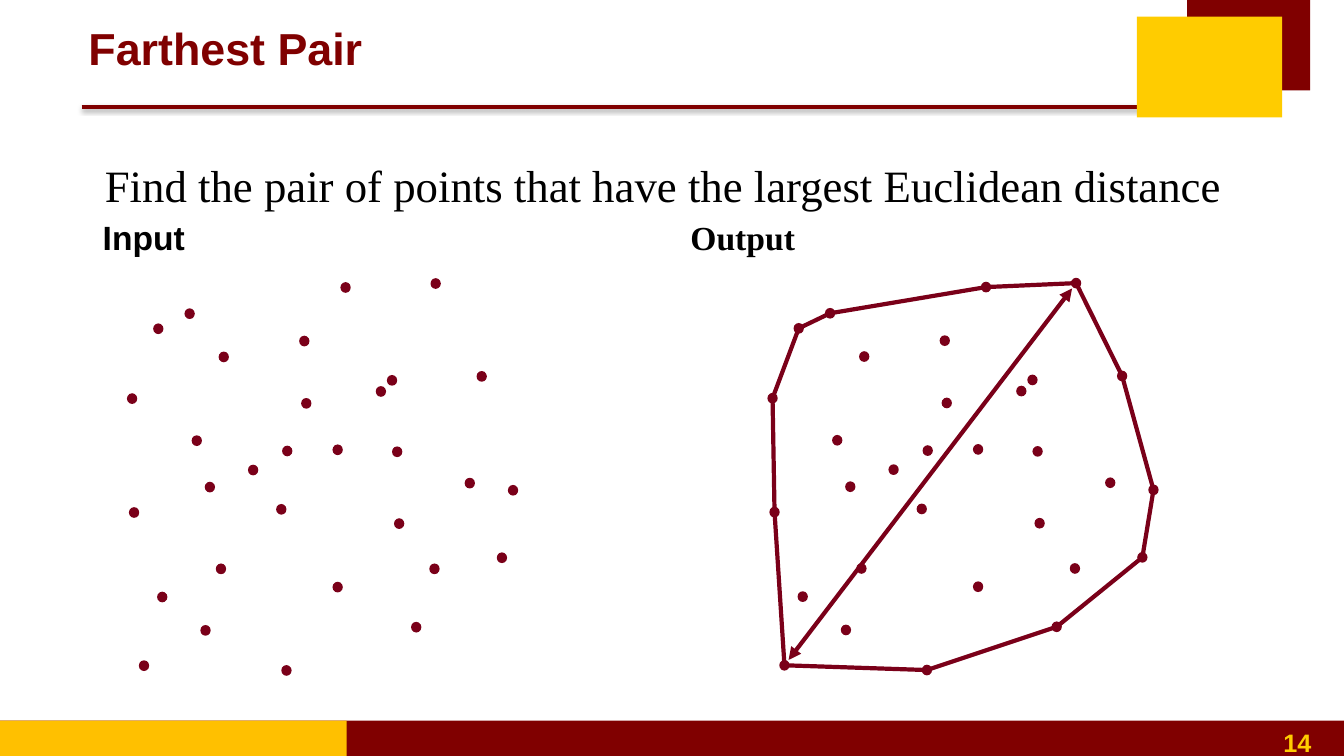
from lxml.etree import SubElement
from pptx import Presentation
from pptx.dml.color import RGBColor
from pptx.enum.shapes import MSO_CONNECTOR as Connector, MSO_SHAPE as Shape
from pptx.enum.text import MSO_ANCHOR as Anchor, PP_ALIGN as Align
from pptx.oxml.ns import qn
from pptx.util import Cm, Pt

MAROON, GOLD, AMBER, BLACK, POINT = "800000", "FFCC00", "FFC000", "000000", "7A0019"
SANS, SERIF = "Arial", "Times New Roman"
PAGE_WIDTH, PAGE_HEIGHT = 33.87, 19.05
DOT_WIDTH, DOT_HEIGHT = 0.26, 0.27

# Dot corners in cm from the cloud's top left; the hull runs counterclockwise
HULL = [(7.65, 0), (5.38, 0.1), (1.45, 0.76), (0.66, 1.14), (0, 2.9), (0.05, 5.77),
        (0.3, 9.63), (3.89, 9.75), (7.16, 8.66), (9.32, 6.91), (9.6, 5.21), (8.81, 2.34)]
INNER = [(2.31, 1.85), (4.34, 1.45), (6.55, 2.44), (6.27, 2.72), (4.39, 3.02),
         (5.18, 4.19), (6.68, 4.24), (8.51, 5.03), (6.73, 6.05), (3.76, 5.69),
         (3.05, 4.7), (3.91, 4.22), (1.63, 3.96), (1.96, 5.13), (0.76, 7.9),
         (1.85, 8.74), (2.24, 7.19), (5.18, 7.65), (7.62, 7.19)]
FARTHEST = HULL[6], HULL[0]


def color(value):
    return RGBColor.from_string(value)


def add_filled(shapes, kind, left, top, width, height, fill):
    shape = shapes.add_shape(kind, Cm(left), Cm(top), Cm(width), Cm(height))
    shape.shadow.inherit = False
    shape.fill.solid()
    shape.fill.fore_color.rgb = color(fill)
    shape.line.fill.background()


def add_text(page, text, left, top, width, height, size, font, fill,
             bold=True, align=Align.LEFT, anchor=Anchor.TOP):
    box = page.shapes.add_textbox(Cm(left), Cm(top), Cm(width), Cm(height))
    box.text_frame.word_wrap = True
    box.text_frame.vertical_anchor = anchor
    para = box.text_frame.paragraphs[0]
    para.alignment = align
    span = para.add_run()
    span.text = text
    span.font.size = Pt(size)
    span.font.name = font
    span.font.bold = bold
    span.font.color.rgb = color(fill)


def add_line(page, start, end, fill):
    """Draw a straight line and return it with its empty effect list."""
    line = page.shapes.add_connector(Connector.STRAIGHT, *map(Cm, start + end))
    line.line.color.rgb = color(fill)
    line.line.width = Pt(3)
    effects = SubElement(line._element.spPr, qn("a:effectLst"))
    return line, effects


def add_header(page, left, top, width):
    # Rule with a soft shadow
    rule, effects = add_line(page, (left, top + 2.69), (left + width, top + 2.69), MAROON)
    shadow = SubElement(effects, qn("a:outerShdw"), blurRad=str(Pt(3.1)),
                        dist=str(Pt(1.8)), dir="5400000", rotWithShape="0")
    tint = SubElement(shadow, qn("a:srgbClr"), val=BLACK)
    SubElement(tint, qn("a:alpha"), val="35000")
    # Corner blocks
    add_filled(page.shapes, Shape.RECTANGLE, left + 27.86, top, 3.1, 2.28, MAROON)
    add_filled(page.shapes, Shape.RECTANGLE, left + 26.59, top + 0.42, 3.66, 2.54, GOLD)
    # Title
    add_text(page, "Farthest Pair", left - 0.08, top + 0.15, 25.96, 2.11,
             32, SANS, MAROON, anchor=Anchor.MIDDLE)


def add_footer(page, left, top, width, height):
    add_filled(page.shapes, Shape.RECTANGLE, left, top, width, height, MAROON)
    add_filled(page.shapes, Shape.RECTANGLE, left, top, 8.74, height, AMBER)
    add_text(page, "14", left + width - 7.63, top + 0.05, 7.06, 0.84,
             18, SANS, GOLD, align=Align.RIGHT)


def add_cloud(page, left, top):
    group = page.shapes.add_group_shape()
    for x, y in HULL + INNER:
        add_filled(group.shapes, Shape.OVAL, left + x, top + y, DOT_WIDTH, DOT_HEIGHT, POINT)


def add_solution(page, left, top):
    def center(point):
        return left + point[0] + DOT_WIDTH / 2, top + point[1] + DOT_HEIGHT / 2

    # Arrow between the farthest points, trimmed a little at both ends
    start, end = map(center, FARTHEST)
    trim = [0.014 * (b - a) for a, b in zip(start, end)]
    arrow, _ = add_line(page, tuple(a + t for a, t in zip(start, trim)),
                        tuple(b - t for b, t in zip(end, trim)), POINT)
    outline = arrow.line._get_or_add_ln()
    for tag in ("a:headEnd", "a:tailEnd"):
        SubElement(outline, qn(tag), type="triangle")

    add_cloud(page, left, top)

    # Convex hull
    corners = [tuple(map(Cm, center(point))) for point in HULL]
    builder = page.shapes.build_freeform(*corners[0])
    builder.add_line_segments(corners[1:], close=True)
    hull = builder.convert_to_shape()
    hull.shadow.inherit = False
    hull.fill.background()
    hull.line.color.rgb = color(POINT)
    hull.line.width = Pt(3)


def add_problem(page, left, top):
    add_text(page, "Find the pair of points that have the largest Euclidean distance",
             left, top, 29.49, 1.63, 32, SERIF, BLACK, bold=False, align=Align.CENTER)
    # Input half
    add_text(page, "Input", left + 0.36, top + 1.5, 14.33, 1.63, 24, SANS, BLACK)
    add_cloud(page, left + 1.22, top + 3.17)
    # Output half
    add_text(page, "Output", left + 15.17, top + 1.5, 14.4, 1.63, 24, SERIF, BLACK)
    add_solution(page, left + 17.36, top + 3.16)


def main():
    deck = Presentation()
    deck.slide_width, deck.slide_height = Cm(PAGE_WIDTH), Cm(PAGE_HEIGHT)
    page = deck.slides.add_slide(deck.slide_layouts[6])
    add_header(page, 2.06, 0, 26.82)
    add_footer(page, 0, 18.16, PAGE_WIDTH, PAGE_HEIGHT - 18.16)
    add_problem(page, 1.98, 3.84)
    deck.save("out.pptx")


if __name__ == "__main__":
    main()
